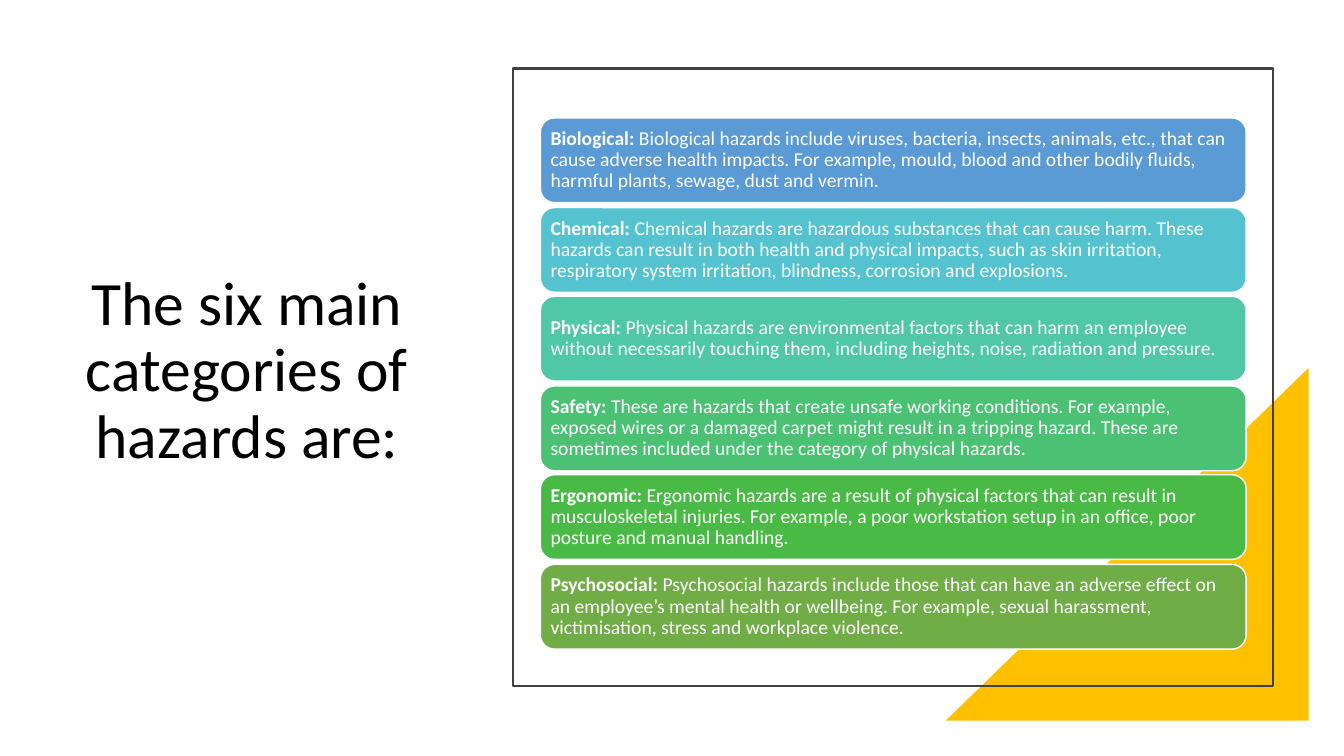
"""Build the slide that lists the six main categories of workplace hazards."""
from dataclasses import dataclass

from pptx import Presentation
from pptx import util as u
from pptx.dml.color import RGBColor
from pptx.enum import shapes, text

PX = 9144
TITLE_ONLY = 5


@dataclass(frozen=True)
class Theme:
    """Colours, font and type sizes of the slide."""
    font: str = "Calibri"
    title_size: int = 44
    body_size: int = 14
    ink: str = "000000"
    paper: str = "FFFFFF"
    accent: str = "FFC000"
    frame: str = "404040"


THEME = Theme()

HAZARDS = [
    ("5B9BD5", "Biological:",
     "Biological hazards include viruses, bacteria, insects, animals, etc., that can cause "
     "adverse health impacts. For example, mould, blood and other bodily fluids, harmful "
     "plants, sewage, dust and vermin."),
    ("55C3CF", "Chemical:",
     "Chemical hazards are hazardous substances that can cause harm. These hazards can result "
     "in both health and physical impacts, such as skin irritation, respiratory system "
     "irritation, blindness, corrosion and explosions."),
    ("50C8A7", "Physical:",
     "Physical hazards are environmental factors that can harm an employee without necessarily "
     "touching them, including heights, noise, radiation and pressure."),
    ("4BC174", "Safety:",
     "These are hazards that create unsafe working conditions. For example, exposed wires or a "
     "damaged carpet might result in a tripping hazard. These are sometimes included under the "
     "category of physical hazards."),
    ("4ABA46", "Ergonomic:",
     "Ergonomic hazards are a result of physical factors that can result in musculoskeletal "
     "injuries. For example, a poor workstation setup in an office, poor posture and manual "
     "handling."),
    ("70AD47", "Psychosocial:",
     "Psychosocial hazards include those that can have an adverse effect on an employee’s "
     "mental health or wellbeing. For example, sexual harassment, victimisation, stress and "
     "workplace violence."),
]


def set_format(target, values):
    """Set each named attribute of the target."""
    for name, value in values.items():
        setattr(target, name, value)


def place(shape, left, top, width, height):
    """Move and size a shape in px."""
    box = {"left": left, "top": top, "width": width, "height": height}
    set_format(shape, {name: length * PX for name, length in box.items()})


def set_frame(frame, inset, bottom):
    """Wrap and centre text vertically inside px insets."""
    set_format(frame, {
        "word_wrap": True,
        "auto_size": text.MSO_AUTO_SIZE.NONE,
        "vertical_anchor": text.MSO_ANCHOR.MIDDLE,
        "margin_left": inset * PX,
        "margin_right": inset * PX,
        "margin_top": inset * PX,
        "margin_bottom": bottom * PX,
    })


def add_run(paragraph, words, size, color, bold=False):
    """Append a formatted run to a paragraph."""
    run = paragraph.add_run()
    run.text = words
    set_format(run.font, {"name": THEME.font, "size": u.Pt(size), "bold": bold})
    run.font.color.rgb = RGBColor.from_string(color)


def add_title(slide, words, box):
    """Fill the title placeholder with centred text set one line high."""
    title = slide.shapes.title
    place(title, *box)
    set_frame(title.text_frame, inset=5, bottom=72)
    paragraph = title.text_frame.paragraphs[0]
    set_format(paragraph, {"alignment": text.PP_ALIGN.CENTER, "line_spacing": 0.9})
    add_run(paragraph, words, THEME.title_size, THEME.ink)


def add_preset(slide, kind, box, fill=None, line=None, weight=1):
    """Add a flat preset shape with an optional fill and outline."""
    shape = slide.shapes.add_shape(kind, *(length * PX for length in box))
    shape.shadow.inherit = False
    if fill:
        shape.fill.solid()
        shape.fill.fore_color.rgb = RGBColor.from_string(fill)
    else:
        shape.fill.background()
    if line:
        shape.line.color.rgb = RGBColor.from_string(line)
        shape.line.width = u.Pt(weight)
    else:
        shape.line.fill.background()
    return shape


def add_hazard(slide, box, color, label, description):
    """Add a rounded bar with a bold label and its description."""
    bar = add_preset(slide, shapes.MSO_SHAPE.ROUNDED_RECTANGLE, box, color, THEME.paper)
    set_frame(bar.text_frame, inset=6, bottom=6)
    paragraph = bar.text_frame.paragraphs[0]
    set_format(paragraph, {"alignment": text.PP_ALIGN.LEFT, "line_spacing": 0.9})
    add_run(paragraph, label, THEME.body_size, THEME.paper, bold=True)
    add_run(paragraph, f" {description}", THEME.body_size, THEME.paper)


def main():
    """Build and save the slide."""
    presentation = Presentation()
    set_format(presentation, {"slide_width": 1333 * PX, "slide_height": 750 * PX})
    slide = presentation.slides.add_slide(presentation.slide_layouts[TITLE_ONLY])

    add_title(slide, "The six main categories of hazards are:", (9, 138, 472, 529))
    corner = add_preset(slide, shapes.MSO_SHAPE.RIGHT_TRIANGLE, (938, 365, 360, 350),
                        fill=THEME.accent)
    corner.element.spPr.xfrm.set("flipH", "1")
    add_preset(slide, shapes.MSO_SHAPE.RECTANGLE, (509, 68, 754, 613),
               line=THEME.frame, weight=1.5)

    first_top, last_top = 117, 560
    pitch = (last_top - first_top) / (len(HAZARDS) - 1)
    for index, hazard in enumerate(HAZARDS):
        top = round(first_top + index * pitch)
        add_hazard(slide, (536, top, 700, 84), *hazard)

    presentation.save("out.pptx")


if __name__ == "__main__":
    main()
